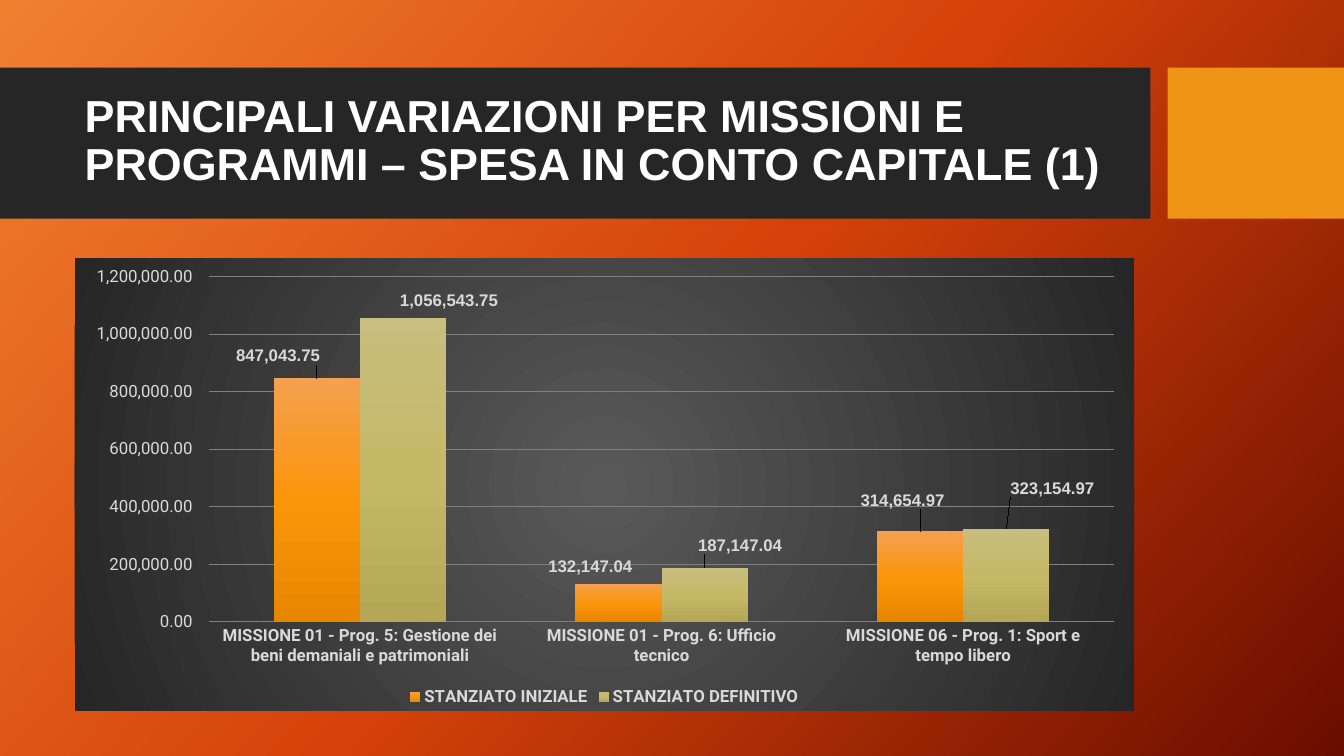
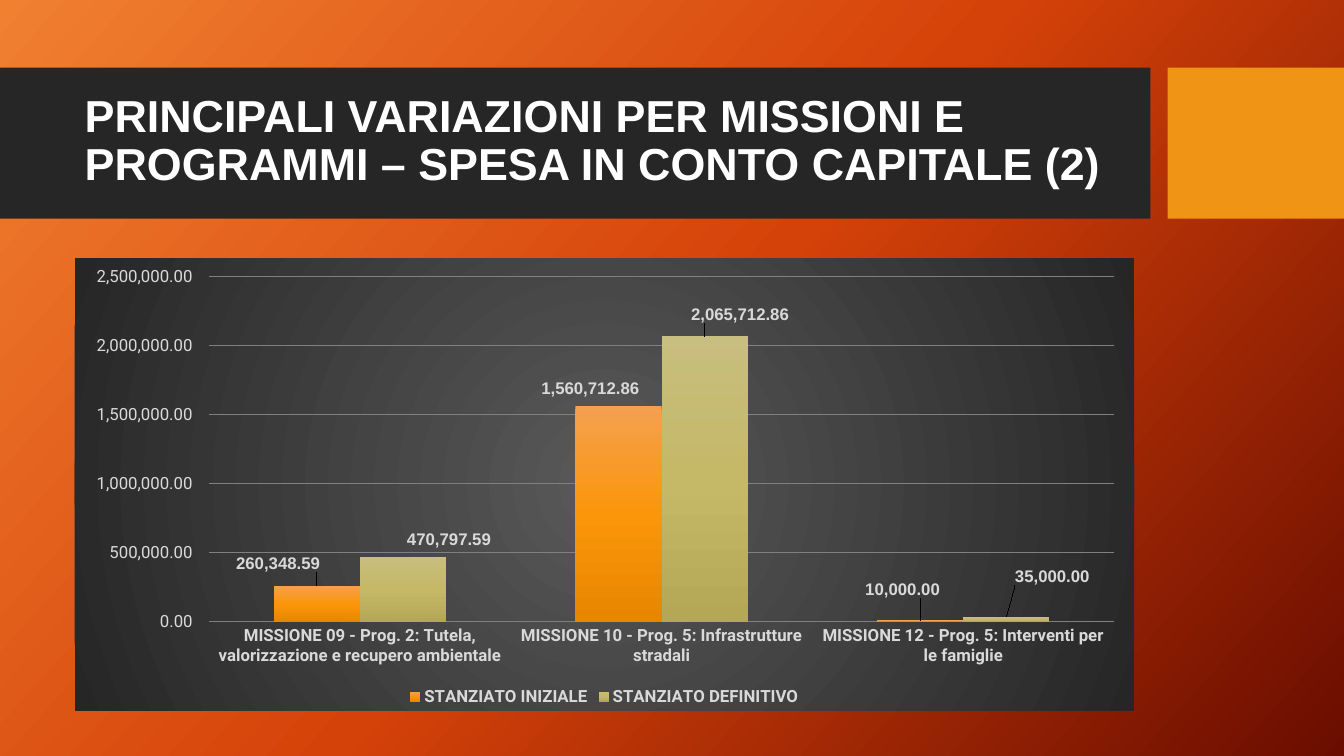
from lxml import etree
from pptx import Presentation
from pptx.chart.data import CategoryChartData
from pptx.dml.color import RGBColor
from pptx.enum.chart import XL_CHART_TYPE, XL_LABEL_POSITION, XL_LEGEND_POSITION, XL_TICK_MARK
from pptx.enum.shapes import MSO_SHAPE
from pptx.enum.text import MSO_ANCHOR, MSO_AUTO_SIZE, PP_ALIGN
from pptx.util import Inches, Pt

COLUMNS = XL_CHART_TYPE.COLUMN_CLUSTERED
OUTSIDE_END = XL_LABEL_POSITION.OUTSIDE_END
BOTTOM = XL_LEGEND_POSITION.BOTTOM
NO_TICK = XL_TICK_MARK.NONE
RECTANGLE = MSO_SHAPE.RECTANGLE

DRAWING = "http://schemas.openxmlformats.org/drawingml/2006/main"
CHART = "http://schemas.openxmlformats.org/drawingml/2006/chart"
NUMBER_FORMAT = r"#,##0.00\ _€"

TITLE = "PRINCIPALI VARIAZIONI PER MISSIONI E PROGRAMMI – SPESA IN CONTO CAPITALE ({})"
SERIES_NAMES = ["STANZIATO INIZIALE", "STANZIATO DEFINITIVO"]
CHARTS = [
    {
        "categories": [
            "MISSIONE 01 - Prog. 5: Gestione dei beni demaniali e patrimoniali",
            "MISSIONE 01 - Prog. 6: Ufficio tecnico",
            "MISSIONE 06 - Prog. 1: Sport e tempo libero",
        ],
        "values": [
            (847043.75, 132147.04, 314654.97),
            (1056543.75, 187147.04, 323154.97),
        ],
        "maximum": 1200000,
        "step": 200000,
    },
    {
        "categories": [
            "MISSIONE 09 - Prog. 2: Tutela, valorizzazione e recupero ambientale",
            "MISSIONE 10 - Prog. 5: Infrastrutture stradali",
            "MISSIONE 12 - Prog. 5: Interventi per le famiglie",
        ],
        "values": [
            (260348.59, 1560712.86, 10000),
            (470797.59, 2065712.86, 35000),
        ],
        "maximum": 2500000,
        "step": 500000,
    },
]

BANDS = [(0, 11.41, "262626"), (11.58, 1.75, "F09415")]
BACKGROUND = [(0, "F18031"), (50, "D54209"), (100, "6A0D00")]
CHART_AREA = [(0, "595959"), (100, "262626")]
SERIES_FILLS = [
    [(0, "F4A050"), (50, "FB960A"), (100, "E88600")],
    [(0, "C8BE7F"), (50, "C5B867"), (100, "B4A756")],
]
LABEL_OFFSETS = [
    [(-0.03, -0.02), (-0.02, -0.01), (-0.01, -0.04)],
    [(0.05, -0.01), (0.04, -0.02), (0.05, -0.06)],
]
PLOT_AREA = {"x": 0.127, "y": 0.041, "w": 0.854, "h": 0.763}

TITLE_FONT = {"name": "Arial", "size": Pt(32), "bold": True}
CHART_FONT = {"name": "Roboto", "size": Pt(10), "bold": False}
VALUE_FONT = {"name": "Roboto", "size": Pt(12), "bold": False}
CATEGORY_FONT = {"name": "Roboto", "size": Pt(12), "bold": True}
LABEL_FONT = {"name": "Arial", "size": Pt(12), "bold": True}


def color(value):
    return RGBColor.from_string(value)


def apply(target, values):
    for name, value in values.items():
        setattr(target, name, value)


def format_font(font, values, font_color):
    apply(font, values)
    font.color.rgb = color(font_color)


def gradient(stops, angle=None):
    fill = etree.Element(f"{{{DRAWING}}}gradFill", nsmap={"a": DRAWING}, rotWithShape="1")
    stop_list = etree.SubElement(fill, f"{{{DRAWING}}}gsLst")
    for position, value in stops:
        stop = etree.SubElement(stop_list, f"{{{DRAWING}}}gs", pos=str(position * 1000))
        etree.SubElement(stop, f"{{{DRAWING}}}srgbClr", val=value)
    if angle is None:
        circle = etree.SubElement(fill, f"{{{DRAWING}}}path")
        circle.set("path", "circle")
        sides = dict.fromkeys("ltrb", "50000")
        etree.SubElement(circle, f"{{{DRAWING}}}fillToRect", sides)
    else:
        etree.SubElement(fill, f"{{{DRAWING}}}lin", ang=str(angle * 60000), scaled="0")
    return fill


def set_gradient(fill, parent, stops, angle):
    fill.solid()
    solid = parent.find(f"{{{DRAWING}}}solidFill")
    parent.replace(solid, gradient(stops, angle))


def manual_layout(values, inner=False):
    layout = etree.Element(f"{{{CHART}}}layout", nsmap={"c": CHART})
    manual = etree.SubElement(layout, f"{{{CHART}}}manualLayout")
    settings = {}
    if inner:
        settings = {"layoutTarget": "inner", "xMode": "edge", "yMode": "edge"}
    for name, value in {**settings, **values}.items():
        etree.SubElement(manual, f"{{{CHART}}}{name}", val=str(value))
    return layout


def format_template(presentation, layout, slide):
    master = presentation.slide_master
    master.background.fill.solid()
    properties = master.element.xpath(".//p:bgPr")[0]
    set_gradient(master.background.fill, properties, BACKGROUND, 42)
    for index, (left, width, fill) in enumerate(BANDS):
        band = slide.shapes.add_shape(
            RECTANGLE, Inches(left), Inches(0.67), Inches(width), Inches(1.5)
        )
        band.shadow.inherit = False
        band.fill.solid()
        band.fill.fore_color.rgb = color(fill)
        band.line.fill.background()
        layout.shapes.element.insert(2 + index, band.element)
    title = next(shape for shape in layout.placeholders if shape.placeholder_format.idx == 0)
    apply(title, {
        "left": Inches(0.74), "top": Inches(0.82),
        "width": Inches(10.51), "height": Inches(1.18),
    })


def add_title(slide, number):
    frame = slide.shapes.title.text_frame
    frame.text = TITLE.format(number)
    apply(frame, {
        "word_wrap": True, "auto_size": MSO_AUTO_SIZE.NONE,
        "vertical_anchor": MSO_ANCHOR.MIDDLE,
    })
    paragraph = frame.paragraphs[0]
    apply(paragraph, {"alignment": PP_ALIGN.LEFT, "line_spacing": 0.9})
    format_font(paragraph.runs[0].font, TITLE_FONT, "FFFFFF")


def format_series(series, element, stops, offsets):
    series.format.fill.solid()
    set_gradient(series.format.fill, element.xpath("c:spPr")[0], stops, 90)
    labels = series.data_labels
    apply(labels, {
        "show_value": True, "number_format": NUMBER_FORMAT,
        "number_format_is_linked": False, "position": OUTSIDE_END,
    })
    format_font(labels.font, LABEL_FONT, "D9D9D9")
    for index, (across, down) in enumerate(offsets):
        label = series.points[index].data_label
        label.position = OUTSIDE_END
        format_font(label.font, LABEL_FONT, "D9D9D9")
        identifier = element.xpath(f"c:dLbls/c:dLbl/c:idx[@val='{index}']")[0]
        offset = manual_layout({"x": across, "y": down})
        identifier.addnext(offset)
        number = etree.Element(
            f"{{{CHART}}}numFmt", formatCode=NUMBER_FORMAT, sourceLinked="0"
        )
        offset.addnext(number)


def format_axes(chart, maximum, step):
    for axis, font in (
        (chart.category_axis, CATEGORY_FONT), (chart.value_axis, VALUE_FONT)
    ):
        apply(axis, {"major_tick_mark": NO_TICK, "minor_tick_mark": NO_TICK})
        axis.format.line.fill.background()
        format_font(axis.tick_labels.font, font, "D9D9D9")
    axis = chart.value_axis
    apply(axis, {
        "minimum_scale": 0, "maximum_scale": maximum,
        "major_unit": step, "has_major_gridlines": True,
    })
    apply(axis.tick_labels, {
        "number_format": NUMBER_FORMAT, "number_format_is_linked": False,
    })
    grid = axis.major_gridlines.format.line
    grid.width = Pt(0.75)
    grid.color.rgb = color("808080")


def add_chart(slide, content):
    data = CategoryChartData(number_format=NUMBER_FORMAT)
    data.categories = content["categories"]
    for name, values in zip(SERIES_NAMES, content["values"]):
        data.add_series(name, values)
    chart = slide.shapes.add_chart(
        COLUMNS, Inches(0.74), Inches(2.56), Inches(10.51), Inches(4.49), data
    ).chart
    apply(chart, {"has_title": False, "has_legend": True})
    format_font(chart.font, CHART_FONT, "FFFFFF")
    apply(chart.legend, {"position": BOTTOM, "include_in_layout": False})
    format_font(chart.legend.font, CATEGORY_FONT, "D9D9D9")
    format_axes(chart, content["maximum"], content["step"])

    plot = chart.plots[0]
    apply(plot, {"gap_width": 150, "overlap": 0, "vary_by_categories": False})
    elements = chart.element.xpath(".//c:ser")
    for parts in zip(plot.series, elements, SERIES_FILLS, LABEL_OFFSETS):
        format_series(*parts)

    plot_area = chart.element.xpath("c:chart/c:plotArea")[0]
    for layout in plot_area.xpath("c:layout"):
        plot_area.remove(layout)
    plot_area.insert(0, manual_layout(PLOT_AREA, inner=True))
    area = etree.Element(f"{{{CHART}}}spPr", nsmap={"c": CHART})
    area.append(gradient(CHART_AREA))
    line = etree.SubElement(area, f"{{{DRAWING}}}ln")
    etree.SubElement(line, f"{{{DRAWING}}}noFill")
    chart.element.xpath("c:chart")[0].addnext(area)


def main():
    presentation = Presentation()
    presentation.slide_width = Inches(13.33)
    presentation.slide_height = Inches(7.5)
    layout = presentation.slide_layouts.get_by_name("Title Only")
    for number, content in enumerate(CHARTS, 1):
        slide = presentation.slides.add_slide(layout)
        if number == 1:
            format_template(presentation, layout, slide)
        add_title(slide, number)
        add_chart(slide, content)
    presentation.save("out.pptx")


if __name__ == "__main__":
    main()
